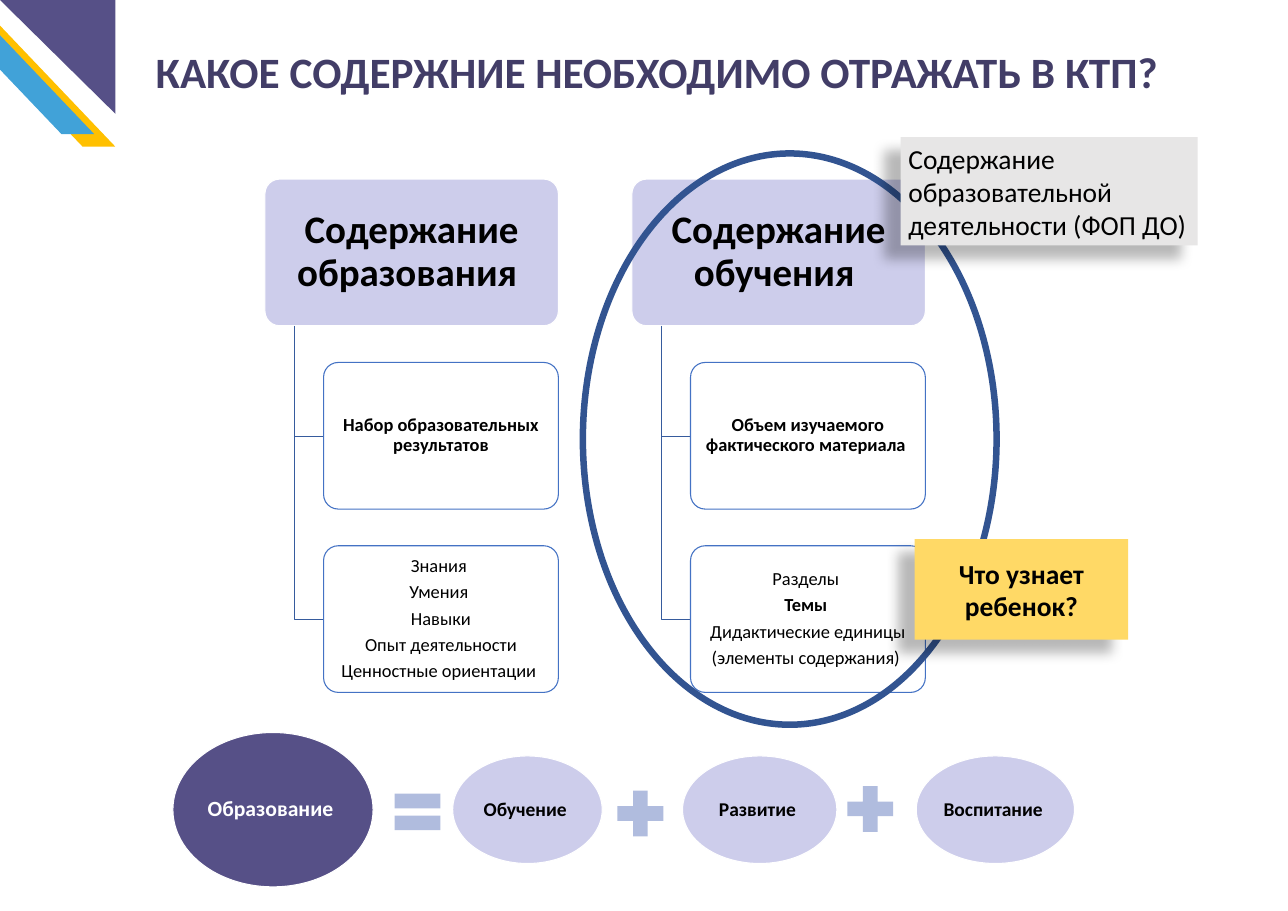
from dataclasses import dataclass
from typing import Any, NamedTuple

from lxml import etree
from pptx import Presentation
from pptx import util as u
from pptx.dml import color
from pptx.enum import shapes, text
from pptx.oxml import ns

COLORS = {
    "purple": "565087", "title": "423D67", "lilac": "CDCDEB", "amber": "FFC000",
    "sky": "41A2D8", "white": "FFFFFF", "black": "000000", "branch": "365B9D",
    "card_line": "4472C4", "ring": "325491", "sign": "B0BCDE",
    "note_grey": "E7E6E6", "note_yellow": "FFD966",
}
SHAPE = shapes.MSO_SHAPE
CENTER = text.PP_ALIGN.CENTER
MIDDLE = text.MSO_ANCHOR.MIDDLE


class Box(NamedTuple):
    left: float
    top: float
    width: float
    height: float


@dataclass
class Label:
    """Paragraphs and the way they are set."""
    lines: tuple[str, ...]
    size: float
    bold: bool = False
    color: str = "black"
    centered: bool = True
    spacing: float = 0.9
    margins: tuple[float, float] = (2.2, 2.2)
    wrap: bool = True
    bold_lines: tuple[str, ...] = ()


@dataclass
class Figure:
    """A preset shape with its paint and optional label."""
    kind: Any
    box: Box
    fill: str | None = None
    line: str | None = None
    line_width: float = 1
    adjustment: float | None = None
    alpha: int = 100
    label: Label | None = None
    shadow: bool = False
    rotation: int = 0
    mirrored: bool = False


@dataclass
class Column:
    """A heading with the cards that hang from it."""
    left: float
    heading: str
    cards: tuple[Label, Label]


def rgb(name: str) -> color.RGBColor:
    return color.RGBColor.from_string(COLORS[name])


def set_values(target: Any, values: dict[str, Any]) -> None:
    for name, value in values.items():
        setattr(target, name, value)


def points(box: Box) -> list[u.Length]:
    return [u.Pt(length) for length in box]


def write_label(shape: Any, label: Label) -> None:
    frame = shape.text_frame
    side, edge = (u.Pt(margin) for margin in label.margins)
    set_values(frame, {
        "word_wrap": label.wrap, "vertical_anchor": MIDDLE,
        "margin_left": side, "margin_right": side,
        "margin_top": edge, "margin_bottom": edge,
    })
    space_after = 0.35 * label.size if label.spacing < 1 else 0
    for index, line in enumerate(label.lines):
        paragraph = frame.add_paragraph() if index else frame.paragraphs[0]
        set_values(paragraph, {
            "alignment": CENTER if label.centered else text.PP_ALIGN.LEFT,
            "line_spacing": label.spacing, "space_after": u.Pt(space_after),
        })
        run = paragraph.add_run()
        run.text = line
        set_values(run.font, {
            "name": "Calibri", "size": u.Pt(label.size),
            "bold": label.bold or line in label.bold_lines,
        })
        run.font.color.rgb = rgb(label.color)


def paint(shape: Any, fill: str | None, line: str | None, width: float = 1) -> None:
    shape.shadow.inherit = False
    for target, name in ((shape.fill, fill), (shape.line.fill, line)):
        if name:
            target.solid()
            target.fore_color.rgb = rgb(name)
        else:
            target.background()
    if line:
        shape.line.width = u.Pt(width)


def add_alpha(color_element: Any, percent: int) -> None:
    etree.SubElement(color_element, ns.qn("a:alpha"), val=str(percent * 1000))


def add_shadow(shape: Any) -> None:
    effects = shape.element.spPr.find(ns.qn("a:effectLst"))
    outer = etree.SubElement(
        effects, ns.qn("a:outerShdw"), blurRad=str(u.Pt(11.8)), dist=str(u.Pt(19.7)),
        dir=str(141 * 60000), algn="tr", rotWithShape="0")
    add_alpha(etree.SubElement(outer, ns.qn("a:srgbClr"), val=COLORS["black"]), 28)


def draw_figure(slide: Any, figure: Figure) -> None:
    shape = slide.shapes.add_shape(figure.kind, *points(figure.box))
    paint(shape, figure.fill, figure.line, figure.line_width)
    shape.rotation = figure.rotation
    if figure.adjustment is not None:
        shape.adjustments[0] = figure.adjustment
    if figure.mirrored:
        shape.element.spPr.get_or_add_xfrm().set("flipH", "1")
    if figure.alpha < 100:
        add_alpha(shape.element.spPr.find(ns.qn("a:solidFill"))[0], figure.alpha)
    if figure.shadow:
        add_shadow(shape)
    if figure.label:
        write_label(shape, figure.label)


HEAD = Box(244.8, 165.5, 271.2, 135.5)
ROW_PITCH = 1.25 * HEAD.height


def draw_column(slide: Any, column: Column) -> None:
    head = HEAD._replace(left=column.left)
    draw_figure(slide, Figure(
        SHAPE.ROUNDED_RECTANGLE, head, "lilac", "white", adjustment=0.1,
        label=Label((column.heading,), 36, True, margins=(5.4, 3.6))))
    trunk = head.left + 0.1 * head.width
    card_left = head.left + 0.2 * head.width
    for row, label in enumerate(column.cards, start=1):
        card = Box(card_left, head.top + row * ROW_PITCH, 0.8 * head.width, head.height)
        middle = card.top + card.height / 2
        builder = slide.shapes.build_freeform(trunk, head.top + head.height, scale=u.Pt(1))
        builder.add_line_segments([(trunk, middle), (card_left, middle)], close=False)
        paint(builder.convert_to_shape(), None, "branch")
        draw_figure(slide, Figure(
            SHAPE.ROUNDED_RECTANGLE, card, "white", "card_line",
            adjustment=0.1, alpha=90, label=label))


CORNER = [
    Figure(SHAPE.PARALLELOGRAM, Box(-56.9, -4.3, 163.4, 139.7), "amber", adjustment=0.953, mirrored=True),
    Figure(SHAPE.PARALLELOGRAM, Box(-76.3, -15.8, 163.4, 139.7), "sky", adjustment=0.953, mirrored=True),
    Figure(SHAPE.RIGHT_TRIANGLE, Box(0, 0, 106.6, 105.1), "purple", rotation=180),
]
TITLE = Label(("КАКОЕ СОДЕРЖНИЕ НЕОБХОДИМО ОТРАЖАТЬ В КТП?",), 40, True, "title",
              centered=False, spacing=1, margins=(7.2, 3.6))
COLUMNS = [
    Column(HEAD.left, "Содержание образования ", (
        Label(("Набор образовательных результатов",), 17, True),
        Label(("Знания ", "Умения ", "Навыки", "Опыт деятельности",
               "Ценностные ориентации "), 17))),
    Column(HEAD.left + 339.1, "Содержание обучения ", (
        Label(("Объем изучаемого фактического материала ",), 17, True),
        Label(("Разделы ", "Темы ", "Дидактические единицы",
               "(элементы содержания) "), 17, bold_lines=("Темы ",)))),
]
RING = Figure(SHAPE.OVAL, Box(538.6, 141.8, 382.3, 527.8), line="ring", line_width=6)
RESULT = Figure(SHAPE.OVAL, Box(159.8, 676.8, 185, 142.6), "purple", "white",
                label=Label(("Образование ",), 20, True, "white"))
TERMS = [("Обучение ", 418.3, 138.2), ("Развитие ", 630.7, 142.6), ("Воспитание ", 846.7, 146.2)]
SIGNS = [(SHAPE.MATH_EQUAL, 357.1, 721.4), (SHAPE.MATH_PLUS, 563, 722.9),
         (SHAPE.MATH_PLUS, 775.4, 718.6)]
NOTES = [
    Figure(SHAPE.RECTANGLE, Box(832.3, 126.7, 274.3, 100.1), "note_grey", shadow=True,
           label=Label(("Содержание", "образовательной", "деятельности (ФОП ДО)"), 25.4,
                       centered=False, spacing=1, margins=(7.2, 3.6), wrap=False)),
    Figure(SHAPE.RECTANGLE, Box(845.3, 498.2, 197.3, 92.9), "note_yellow", shadow=True,
           label=Label(("Что узнает ребенок?",), 25.4, True, spacing=1, margins=(7.2, 3.6))),
]


def main() -> None:
    presentation = Presentation()
    set_values(presentation, {"slide_width": u.Pt(1190.2), "slide_height": u.Pt(841.7)})
    slide = presentation.slides.add_slide(presentation.slide_layouts[6])

    # Corner ornament and title
    for figure in CORNER:
        draw_figure(slide, figure)
    write_label(slide.shapes.add_textbox(*points(Box(136.8, 38.2, 956.2, 55.4))), TITLE)

    # Two hierarchies, the second one circled
    for column in COLUMNS:
        draw_column(slide, column)
    draw_figure(slide, RING)

    # Equation
    draw_figure(slide, RESULT)
    for word, left, width in TERMS:
        draw_figure(slide, Figure(SHAPE.OVAL, Box(left, 698.4, width, 99.4), "lilac", "white",
                                  label=Label((word,), 18, True)))
    for kind, left, top in SIGNS:
        draw_figure(slide, Figure(kind, Box(left, top, 57.6, 57.6), "sign"))

    # Notes
    for note in NOTES:
        draw_figure(slide, note)

    presentation.save("out.pptx")


if __name__ == "__main__":
    main()
